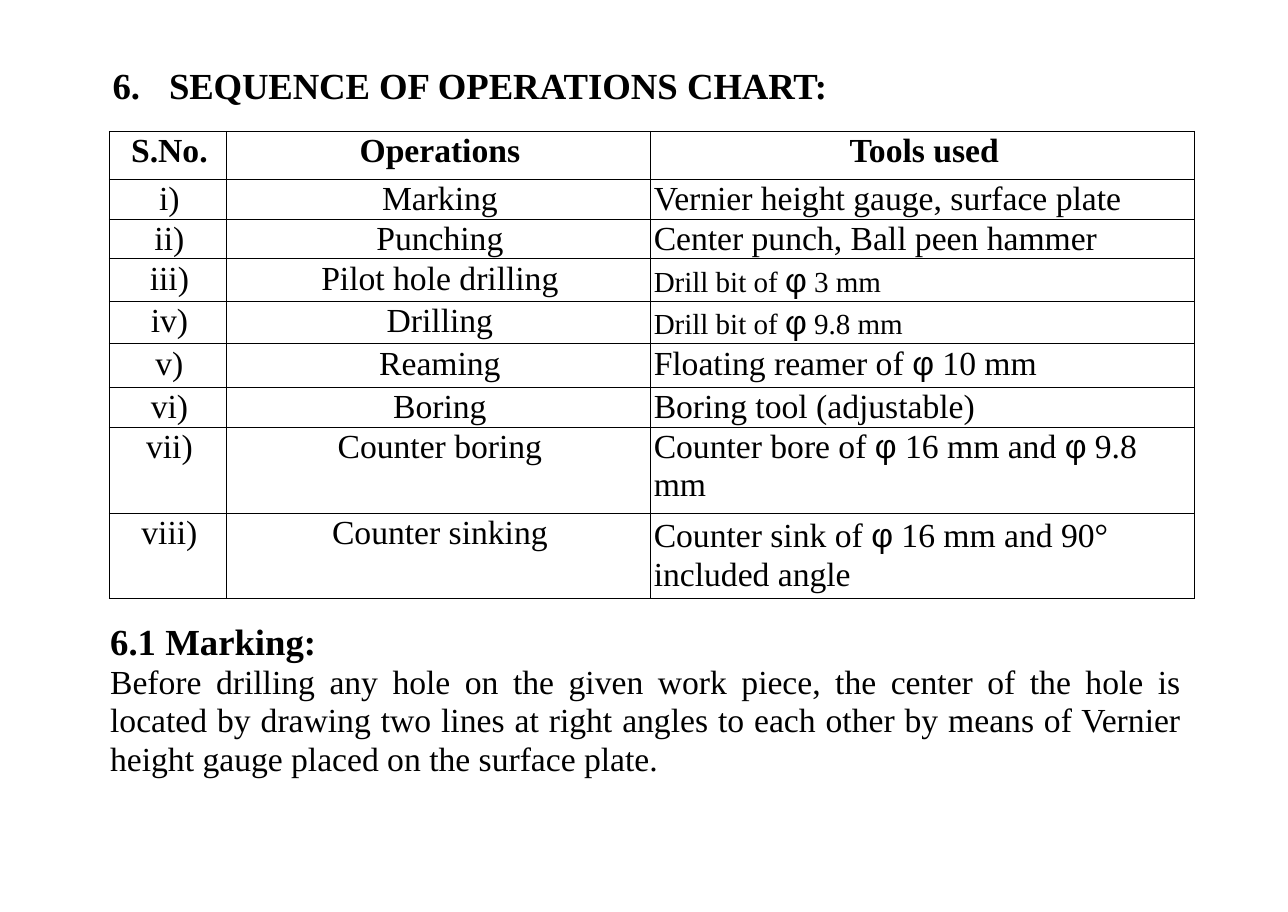
from lxml import etree
from pptx import Presentation
from pptx.dml.color import RGBColor
from pptx.enum.text import PP_ALIGN
from pptx.oxml.ns import qn
from pptx.util import Cm, Pt

LEFT, CENTER, JUSTIFY = PP_ALIGN.LEFT, PP_ALIGN.CENTER, PP_ALIGN.JUSTIFY
BLACK = RGBColor(0, 0, 0)
SERIF, SANS = "Times New Roman", "Arial"
BODY, HEADING, SMALL = 22, 24, 19
LINE = Pt(25.2)
LINE_WIDTH = Pt(0.75)

HEADERS = ["S.No.", "Operations", "Tools used"]
COLUMN_WIDTHS = [2.69, 9.78, 12.55]
HEADER_HEIGHT = 1.1
# number, operation, tools, text size of tools, line spacing, space before, row height
OPERATIONS = [
    ("i)", "Marking", "Vernier height gauge, surface plate", BODY, LINE, 0, 0.92),
    ("ii)", "Punching", "Center punch, Ball peen hammer", BODY, LINE, 0, 0.92),
    ("iii)", "Pilot hole drilling", "Drill bit of φ 3 mm", SMALL, Pt(26.1), 0.5, 0.98),
    ("iv)", "Drilling", "Drill bit of φ 9.8 mm", SMALL, Pt(26.1), 0.5, 0.98),
    ("v)", "Reaming", "Floating reamer of φ 10 mm", BODY, 1.0, 0.5, 1.01),
    ("vi)", "Boring", "Boring tool (adjustable)", BODY, LINE, 0, 0.92),
    ("vii)", "Counter boring", "Counter bore of φ 16 mm and φ 9.8 mm",
     BODY, 1.0, 0.5, 1.97),
    ("viii)", "Counter sinking", "Counter sink of φ 16 mm and 90° included angle",
     BODY, LINE, 2.2, 1.98),
]


def add_run(p, text, size, bold=False, font=SERIF):
    r = p.add_run()
    r.text = text
    r.font.name, r.font.size, r.font.bold = font, Pt(size), bold
    r.font.color.rgb = BLACK
    return r


def format_paragraph(p, align, line_spacing=1.0, before=0):
    p.alignment = align
    p.line_spacing = line_spacing
    p.space_before = Pt(before)


def add_textbox(slide, left, top, width, height, inset):
    tf = slide.shapes.add_textbox(Cm(left), Cm(top), Cm(width), Cm(height)).text_frame
    tf.word_wrap = True
    tf.margin_left = Cm(inset)
    tf.margin_top = Cm(0.03)
    tf.margin_right = tf.margin_bottom = 0
    return tf


def add_title(slide, left, top, width, height):
    tf = add_textbox(slide, left, top, width, height, 0.11)
    p = tf.paragraphs[0]
    format_paragraph(p, LEFT, before=1)
    tabs = etree.SubElement(p._p.get_or_add_pPr(), qn("a:tabLst"))
    etree.SubElement(tabs, qn("a:tab"), pos=str(Cm(1.3)), algn="l")
    for text, spacing in (("6.\t", -20), ("SEQUENCE ", -10),
                          ("OPERATIONS ", 0), ("CHART:", -10)):
        if text == "OPERATIONS ":
            text = "OF " + text
        r = add_run(p, text, HEADING, True)
        r._r.get_or_add_rPr().set("spc", str(spacing))


def set_borders(cell):
    tcPr = cell._tc.get_or_add_tcPr()
    for i, side in enumerate(("a:lnL", "a:lnR", "a:lnT", "a:lnB")):
        ln = etree.Element(qn(side), w=str(LINE_WIDTH))
        fill = etree.SubElement(ln, qn("a:solidFill"))
        etree.SubElement(fill, qn("a:srgbClr"), val=str(BLACK))
        tcPr.insert(i, ln)


def fill_cell(cell, text, align, size=BODY, bold=False, line_spacing=LINE, before=0):
    cell.fill.background()
    set_borders(cell)
    cell.margin_left = Cm(0.08)
    cell.margin_right = cell.margin_bottom = 0
    cell.margin_top = Cm(before * 0.035)
    p = cell.text_frame.paragraphs[0]
    format_paragraph(p, align, line_spacing, before)
    # The diameter sign is set in the sans font at body size
    for part in text.replace("φ", "|φ|").split("|"):
        if part == "φ":
            add_run(p, part, BODY, bold, SANS)
        elif part:
            add_run(p, part, size, bold)


def add_operations_table(slide, left, top):
    heights = [HEADER_HEIGHT] + [op[-1] for op in OPERATIONS]
    table = slide.shapes.add_table(len(heights), len(HEADERS), Cm(left), Cm(top),
                                   Cm(sum(COLUMN_WIDTHS)), Cm(sum(heights))).table
    table.first_row = table.horz_banding = False
    for column, width in zip(table.columns, COLUMN_WIDTHS):
        column.width = Cm(width)
    for row, height in zip(table.rows, heights):
        row.height = Cm(height)

    # Header row
    for col, text in enumerate(HEADERS):
        fill_cell(table.cell(0, col), text, CENTER, bold=True)
    # One row for each operation
    for row, (number, name, tools, size, spacing, before, _) in enumerate(OPERATIONS, 1):
        fill_cell(table.cell(row, 0), number, CENTER)
        fill_cell(table.cell(row, 1), name, CENTER)
        fill_cell(table.cell(row, 2), tools, LEFT, size, False, spacing, before)


def add_marking_section(slide, left, top, width, height):
    tf = add_textbox(slide, left, top, width, height, 0.03)
    p = tf.paragraphs[0]
    format_paragraph(p, JUSTIFY, Pt(28.2), 1)
    add_run(p, "6.1 Marking:", HEADING, True)
    p = tf.add_paragraph()
    format_paragraph(p, JUSTIFY, 0.96, 0.5)
    add_run(p, "Before drilling any hole on the given work piece, the center of the "
               "hole is located by drawing two lines at right angles to each other by "
               "means of Vernier height gauge placed on the surface plate.", BODY)


def main():
    prs = Presentation()
    prs.slide_width, prs.slide_height = Cm(29.69), Cm(21.03)
    slide = prs.slides.add_slide(prs.slide_layouts[6])
    add_title(slide, 2.49, 1.42, 17.5, 1.09)
    add_operations_table(slide, 2.52, 3.03)
    add_marking_section(slide, 2.51, 14.25, 24.71, 3.76)
    prs.save("out.pptx")


if __name__ == "__main__":
    main()
